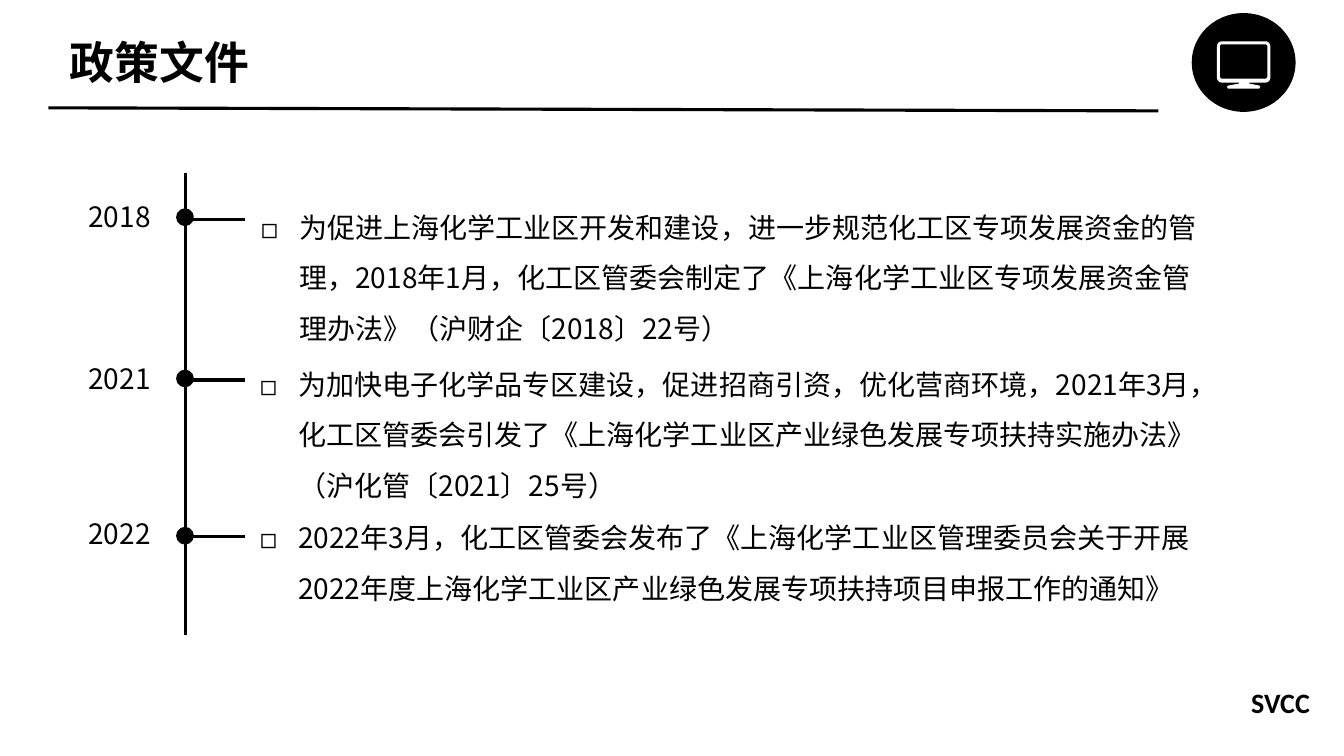
import math
from dataclasses import dataclass

from lxml import etree
from pptx import Presentation
from pptx import util as u
from pptx.dml.color import RGBColor
from pptx.enum import shapes, text
from pptx.oxml import ns

PX = 9144


@dataclass(frozen=True)
class Theme:
    """Colours, fonts and type sizes of the slide."""

    ink: RGBColor = RGBColor(0, 0, 0)
    paper: RGBColor = RGBColor(255, 255, 255)
    body_font: str = "Noto Sans CJK SC"
    mark_font: str = "Calibri"
    title_size: int = 32
    body_size: int = 20
    rule_width: float = 2.25
    dot_width: float = 3.25


THEME = Theme()
AXIS_X = 184
POLICIES = [
    ("2018", 202, 216, 218, (249, 187, 957, 161),
     "为促进上海化学工业区开发和建设，进一步规范化工区专项发展资金的管理，2018年1月，化工区管委会制定了《上海化学工业区专项发展资金管理办法》（沪财企〔2018〕22号）"),
    ("2021", 362, 376, 377, (248, 343, 963, 174),
     "为加快电子化学品专区建设，促进招商引资，优化营商环境，2021年3月，化工区管委会引发了《上海化学工业区产业绿色发展专项扶持实施办法》（沪化管〔2021〕25号）"),
    ("2022", 516, 532, 532, (248, 495, 963, 111),
     "2022年3月，化工区管委会发布了《上海化学工业区管理委员会关于开展2022年度上海化学工业区产业绿色发展专项扶持项目申报工作的通知》"),
]


def emu(*lengths):
    """Turn px lengths into EMU."""
    return [u.Emu(round(length * PX)) for length in lengths]


def add_bullet(paragraph, mark, indent):
    """Give a paragraph a bullet with a hanging indent."""
    props = paragraph._p.get_or_add_pPr()
    props.set("marL", str(indent * PX))
    props.set("indent", str(-indent * PX))
    etree.SubElement(props, ns.qn("a:buFont")).set("typeface", THEME.body_font)
    etree.SubElement(props, ns.qn("a:buChar")).set("char", mark)


def add_text(slide, box, words, *, size=THEME.body_size, font=THEME.body_font,
             bold=False, align=text.PP_ALIGN.LEFT, spacing=1.0, before=0,
             inset=True, bullet=None):
    """Add one paragraph of formatted text in a box."""
    frame = slide.shapes.add_textbox(*emu(*box)).text_frame
    frame.word_wrap = True
    frame.auto_size = text.MSO_AUTO_SIZE.SHAPE_TO_FIT_TEXT
    if not inset:
        frame.margin_left = frame.margin_right = 0
        frame.margin_top = frame.margin_bottom = 0
    paragraph = frame.paragraphs[0]
    paragraph.alignment = align
    paragraph.line_spacing = spacing
    paragraph.space_before = u.Pt(before)
    if bullet:
        add_bullet(paragraph, bullet, 38)
    run = paragraph.add_run()
    run.text = words
    run.font.size = u.Pt(size)
    run.font.bold = bold
    run.font.color.rgb = THEME.ink
    run.font.name = font
    east_asian = etree.SubElement(run.font._element, ns.qn("a:ea"))
    east_asian.set("typeface", font)


def add_rule(slide, *ends):
    """Add a straight line between two points."""
    rule = slide.shapes.add_connector(shapes.MSO_CONNECTOR.STRAIGHT, *emu(*ends))
    rule.line.color.rgb = THEME.ink
    rule.line.width = u.Pt(THEME.rule_width)
    etree.SubElement(rule._element.spPr, ns.qn("a:effectLst"))


def paint(shape, colour, outline=0):
    """Fill a shape and outline it in the same colour."""
    shape.shadow.inherit = False
    shape.fill.solid()
    shape.fill.fore_color.rgb = colour
    if outline:
        shape.line.color.rgb = colour
        shape.line.width = u.Pt(outline)
    else:
        shape.line.fill.background()


def add_disc(slide, *box, outline=0):
    """Add a filled ellipse."""
    disc = slide.shapes.add_shape(shapes.MSO_SHAPE.OVAL, *emu(*box))
    paint(disc, THEME.ink, outline)


def rounded_outline(left, top, right, bottom, radius):
    """List clockwise points of a rounded rectangle, from its bottom right."""
    corners = [(right - radius, bottom - radius), (left + radius, bottom - radius),
               (left + radius, top + radius), (right - radius, top + radius)]
    return [(x + radius * math.cos(math.radians(angle)),
             y + radius * math.sin(math.radians(angle)))
            for quarter, (x, y) in enumerate(corners)
            for angle in range(90 * quarter, 90 * quarter + 91, 15)]


def add_monitor(slide):
    """Add the monitor with its stand and an open screen."""
    case = rounded_outline(1207, 41, 1260, 82, 5)
    stand = [(1239, 82), (1239, 83), (1249, 85), (1250, 86), (1249, 88),
             (1218, 88), (1217, 86), (1218, 85), (1229, 83), (1229, 82)]
    body = [emu(*point) for point in case[:7] + stand + case[7:]]
    screen = [emu(*point) for point in rounded_outline(1210, 44, 1257, 78, 2)]
    builder = slide.shapes.build_freeform(*body[0])
    builder.add_line_segments(body[1:], close=True)
    builder.move_to(*screen[0])
    builder.add_line_segments(screen[1:], close=True)
    paint(builder.convert_to_shape(), THEME.paper)


def add_policy(slide, year, year_top, dot_y, branch_y, box, summary):
    """Add one year of the timeline with its policy."""
    add_disc(slide, AXIS_X - 7, dot_y - 7, 13, 13, outline=THEME.dot_width)
    add_rule(slide, 243, branch_y, 189, branch_y)
    add_text(slide, (79, year_top, 79, 30), year, align=text.PP_ALIGN.CENTER,
             spacing=0.9, before=4, inset=False)
    add_text(slide, box, summary, spacing=1.5, bullet="◻")


def main():
    """Build and save the slide."""
    deck = Presentation()
    deck.slide_width, deck.slide_height = emu(1333, 750)
    slide = deck.slides.add_slide(deck.slide_layouts[6])
    add_text(slide, (1231, 675, 102, 44), "SVCC", font=THEME.mark_font, bold=True)
    add_rule(slide, 48, 107, 1149, 110)
    add_text(slide, (48, 30, 209, 64), "政策文件", size=THEME.title_size,
             bold=True, align=text.PP_ALIGN.RIGHT)
    add_disc(slide, 1182, 13, 103, 98)
    add_monitor(slide)
    add_rule(slide, AXIS_X, 172, AXIS_X, 630)
    for policy in POLICIES:
        add_policy(slide, *policy)
    deck.save("out.pptx")


if __name__ == "__main__":
    main()
